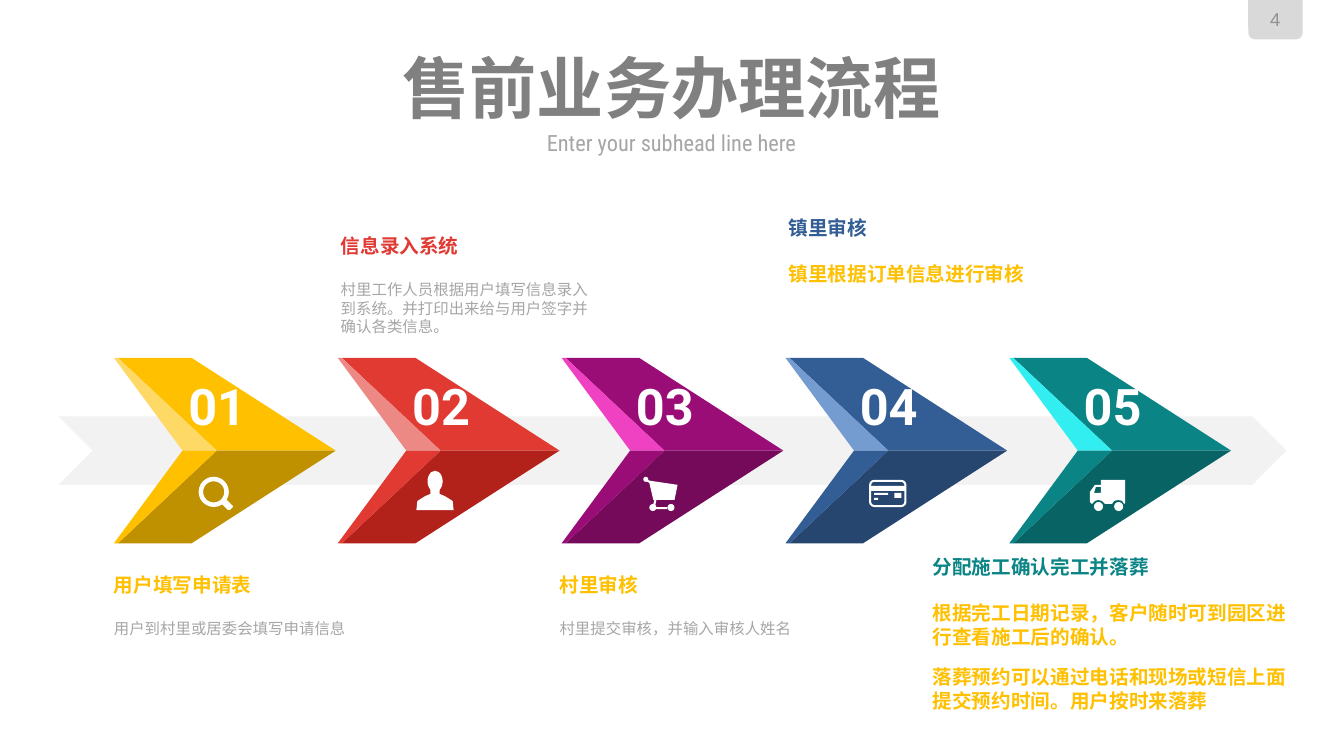
import pptx
import pptx.util
import pptx.dml.color
import pptx.enum.shapes
import pptx.enum.text
import pptx.oxml

Inches = pptx.util.Inches
SHAPE = pptx.enum.shapes.MSO_SHAPE
ALIGN = pptx.enum.text.PP_ALIGN
WHITE, GREY, GOLD = "FFFFFF", "A6A6A6", "FFC000"
STEPS = [
    ("01", "FFC000", "BF9000", "FFD966"),
    ("02", "E03A33", "B3211B", "EC8985"),
    ("03", "9B0D76", "740A59", "EF42C2"),
    ("04", "335E95", "264670", "749CD0"),
    ("05", "0A8485", "086364", "32EEF0"),
]
SMALL, LARGE = (11, "Roboto Condensed", GREY, False), (14, "Roboto", GOLD, True)
NOTES = [
    ((1.13, 5.68, 2.54, 0.66), GOLD, SMALL,
     ["用户填写申请表", "用户到村里或居委会填写申请信息"]),
    ((3.38, 2.32, 2.54, 1.03), "E03A33", SMALL,
     ["信息录入系统", "村里工作人员根据用户填写信息录入到系统。并打印出来给与用户签字并确认各类信息。"]),
    ((5.55, 5.68, 2.54, 0.66), GOLD, SMALL,
     ["村里审核", "村里提交审核，并输入审核人姓名"]),
    ((7.82, 2.14, 2.99, 0.71), "335E95", LARGE,
     ["镇里审核", "镇里根据订单信息进行审核"]),
    ((9.25, 5.5, 3.59, 1.58), "0A8485", LARGE,
     ["分配施工确认完工并落葬", "根据完工日期记录，客户随时可到园区进行查看施工后的确认。",
      "落葬预约可以通过电话和现场或短信上面提交预约时间。用户按时来落葬"]),
]


def paint(fill, color):
    """Make a fill solid in a hex colour."""
    fill.solid()
    fill.fore_color.rgb = pptx.dml.color.RGBColor.from_string(color)


def style(para, size, face, color, bold=False, align=ALIGN.LEFT):
    """Format the runs of a paragraph."""
    para.alignment = align
    for run in para.runs:
        run.font.size = pptx.util.Pt(size)
        run.font.name = face
        run.font.bold = bold
        paint(run.font.fill, color)


def place(shape, box):
    """Move and size a shape in inches."""
    shape.left, shape.top, shape.width, shape.height = map(Inches, box)


def frame(shape, middle=False, wrap=True):
    """Clear the margins of a shape and set its anchor and wrap."""
    text = shape.text_frame
    text.margin_left = text.margin_right = text.margin_top = text.margin_bottom = 0
    text.auto_size = pptx.enum.text.MSO_AUTO_SIZE.NONE
    text.word_wrap = wrap
    anchor = pptx.enum.text.MSO_ANCHOR
    text.vertical_anchor = anchor.MIDDLE if middle else anchor.TOP
    return text


def label(shapes, box, words, size, face, color, bold=False):
    """Add one centred line of text."""
    text = frame(shapes.add_textbox(*map(Inches, box)), middle=True)
    text.text = words
    style(text.paragraphs[0], size, face, color, bold, ALIGN.CENTER)


def note(shapes, box, color, body, lines):
    """Add a heading with its description."""
    text = frame(shapes.add_textbox(*map(Inches, box)))
    text.text = "\n".join(lines)
    head, *rest = text.paragraphs
    style(head, 14, "Roboto", color, True)
    head.space_after = pptx.util.Pt(16.5)
    for para in rest:
        style(para, *body)
        para.space_after = pptx.util.Pt(12)


def finish(shape, color):
    """Give a shape a flat fill with no line or shadow."""
    shape.shadow.inherit = False
    paint(shape.fill, color)
    shape.line.fill.background()
    return shape


def solid(shapes, kind, box, color=WHITE):
    """Add a flat preset shape."""
    return finish(shapes.add_shape(kind, *map(Inches, box)), color)


def outline(shapes, color, *rings):
    """Add a flat polygon made of closed rings of points."""
    rings = [[(Inches(x), Inches(y)) for x, y in ring] for ring in rings]
    pen = shapes.build_freeform(*rings[0][0])
    for i, ring in enumerate(rings):
        if i:
            pen.move_to(*ring[0])
        pen.add_line_segments(ring[1:], close=True)
    return finish(pen.convert_to_shape(), color)


def arrow(shapes, left, number, main_color, dark, light):
    """Add a folded chevron with its number."""
    group = shapes.add_group_shape().shapes
    top, mid, low = 3.55, 4.47, 5.39
    edge, inner, notch, fold, tip = (left + d for d in (0.04, 0.77, 0.68, 1.02, 2.2))
    for end, wide, thin in ((top, main_color, light), (low, dark, main_color)):
        outline(group, wide, [(edge, end), (inner, end), (tip, mid), (fold, mid)])
        outline(group, thin, [(edge, end), (left, end), (notch, mid), (fold, mid)])
    label(group, (left + 0.59, 3.72, 0.87, 0.61), number, 36, "Roboto", WHITE, True)


def lens(shapes):
    """Draw the search icon."""
    ring = solid(shapes, SHAPE.DONUT, (1.97, 4.73, 0.3, 0.3))
    ring.adjustments[0] = 0.15
    outline(shapes, WHITE, [(2.2, 5), (2.25, 4.96), (2.31, 5.02), (2.31, 5.03),
                            (2.28, 5.06), (2.26, 5.06)])


def user(shapes):
    """Draw the person icon."""
    solid(shapes, SHAPE.OVAL, (4.24, 4.67, 0.15, 0.21))
    outline(shapes, WHITE, [(4.27, 4.84), (4.36, 4.84), (4.36, 4.9), (4.41, 4.92),
                            (4.49, 4.97), (4.5, 5.06), (4.13, 5.06), (4.14, 4.97),
                            (4.22, 4.92), (4.27, 4.9)])


def cart(shapes):
    """Draw the shopping cart icon."""
    outline(shapes, WHITE, [(6.42, 4.76), (6.45, 4.77), (6.72, 4.81), (6.69, 4.96),
                            (6.51, 4.96), (6.5, 5.01), (6.51, 5.03), (6.62, 5.03),
                            (6.62, 5.05), (6.48, 5.05), (6.48, 5), (6.49, 4.96),
                            (6.48, 4.96), (6.44, 4.79), (6.4, 4.77)])
    for box in ((6.38, 4.73, 0.05, 0.05), (6.44, 5, 0.07, 0.07), (6.62, 5, 0.07, 0.07)):
        solid(shapes, SHAPE.OVAL, box)


def card(shapes):
    """Draw the bank card icon."""
    rim = solid(shapes, SHAPE.ROUNDED_RECTANGLE, (8.63, 4.77, 0.35, 0.25))
    rim.fill.background()
    paint(rim.line.fill, WHITE)
    rim.line.width = Inches(0.02)
    for box in ((8.63, 4.82, 0.35, 0.05), (8.67, 4.89, 0.14, 0.02),
                (8.67, 4.94, 0.04, 0.02), (8.87, 4.89, 0.07, 0.05)):
        solid(shapes, SHAPE.RECTANGLE, box)


def truck(shapes):
    """Draw the delivery icon."""
    for left in (10.85, 11.05):
        solid(shapes, SHAPE.OVAL, (left, 4.98, 0.09, 0.09))
    body = [(11.16, 4.76), (10.92, 4.76), (10.92, 4.81), (10.86, 4.81), (10.81, 4.88),
            (10.81, 4.98), (10.83, 5), (10.86, 4.97), (10.89, 4.96), (10.93, 4.97),
            (10.96, 5), (11.03, 5), (11.05, 4.97), (11.09, 4.96), (11.13, 4.97),
            (11.15, 5), (11.16, 4.99)]
    pane = [(10.92, 4.89), (10.85, 4.89), (10.87, 4.83), (10.92, 4.83)]
    outline(shapes, WHITE, body, pane)


def heading(slide):
    """Fill the title and subhead placeholders."""
    title, sub = slide.shapes.title, slide.placeholders[1]
    place(title, (0.56, 0.5, 12.2, 0.72))
    place(sub, (0.56, 1.29, 12.2, 0.25))
    text = frame(title, middle=True)
    text.text = "售前业务办理流程"
    style(text.paragraphs[0], 48, "Roboto", "808080", True, ALIGN.CENTER)
    text = frame(sub, middle=True, wrap=False)
    text.text = "Enter your subhead line here"
    para = text.paragraphs[0]
    props = para._p.get_or_add_pPr()
    props.set("marL", "0")
    props.set("indent", "0")
    props.append(pptx.oxml.parse_xml(
        '<a:buNone xmlns:a="http://schemas.openxmlformats.org/drawingml/2006/main"/>'))
    style(para, 16, "Roboto Condensed", GREY, align=ALIGN.CENTER)
    para.space_before = 0


def main():
    """Build and save the process slide."""
    deck = pptx.Presentation()
    deck.slide_width, deck.slide_height = Inches(13.33), Inches(7.5)
    slide = deck.slides.add_slide(deck.slide_layouts[1])
    shapes = slide.shapes
    heading(slide)
    tab = solid(shapes, SHAPE.ROUND_2_SAME_RECTANGLE, (12.38, 0, 0.54, 0.39), "D9D9D9")
    tab.rotation = 180
    label(shapes, (12.43, 0.08, 0.44, 0.22), "4", 13.3, "Arial", "929292")
    band = solid(shapes, SHAPE.NOTCHED_RIGHT_ARROW, (0.58, 4.13, 12.18, 0.68), "F2F2F2")
    band.adjustments[0], band.adjustments[1] = 1, 0.5
    for item in NOTES:
        note(shapes, *item)
    for i, step in enumerate(STEPS):
        arrow(shapes, 1.13 + 2.22 * i, *step)
    for icon in (lens, user, cart, card, truck):
        icon(shapes.add_group_shape().shapes)
    deck.save("out.pptx")


if __name__ == "__main__":
    main()
